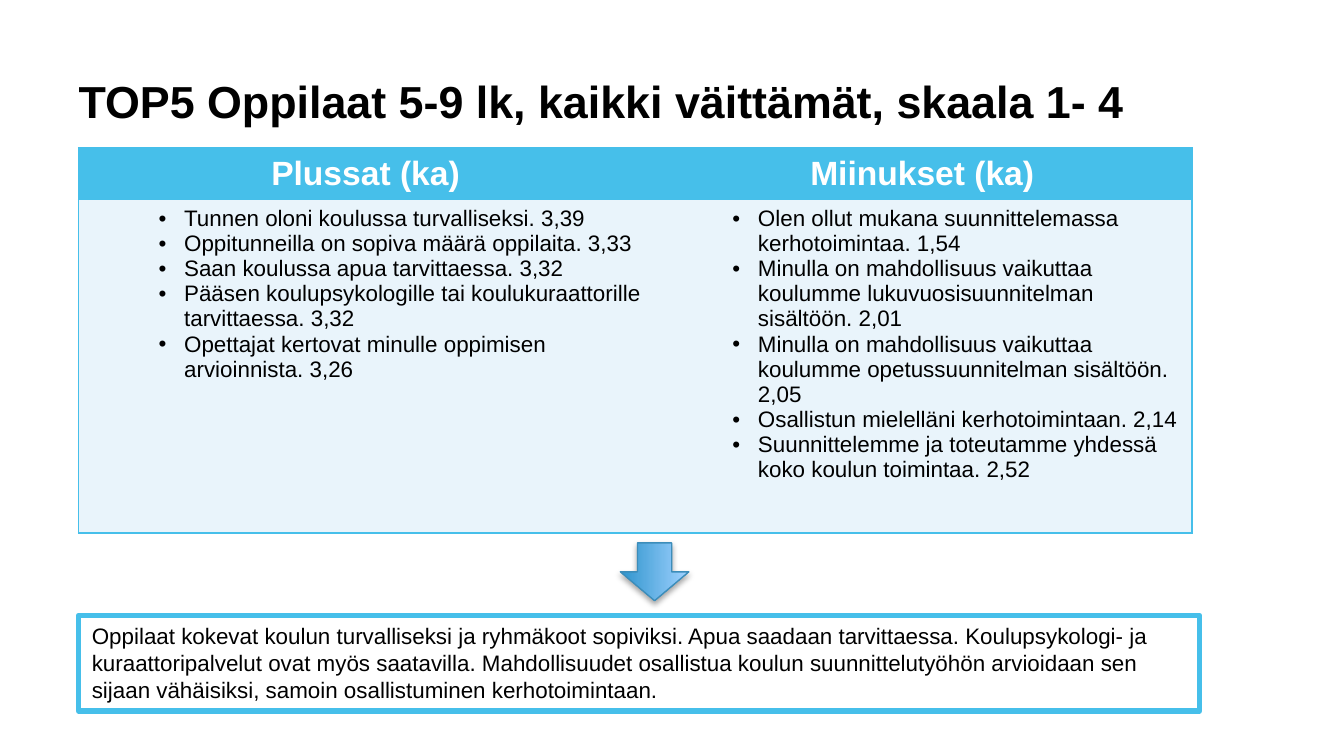
"""Build the slide on the pupils' five best and worst rated claims."""
from lxml import etree
from pptx import Presentation
from pptx.dml.color import RGBColor
from pptx.enum.shapes import MSO_SHAPE
from pptx.enum.text import MSO_ANCHOR, PP_ALIGN
from pptx.oxml.ns import qn
from pptx.util import Pt

PX = 4572
RECT, ARROW = MSO_SHAPE.RECTANGLE, MSO_SHAPE.RIGHT_ARROW
TOP, BOTTOM = MSO_ANCHOR.TOP, MSO_ANCHOR.BOTTOM
LEFT, CENTER = PP_ALIGN.LEFT, PP_ALIGN.CENTER
HUES = {
    "ink": "000000",
    "white": "FFFFFF",
    "sky": "46BFEA",
    "pale": "E9F4FB",
    "deep": "2E94CD",
    "light": "A1D2FF",
    "edge": "3C8DBA",
}
LISTS = {
    "Plussat (ka)": [
        "Tunnen oloni koulussa turvalliseksi. 3,39",
        "Oppitunneilla on sopiva määrä oppilaita. 3,33",
        "Saan koulussa apua tarvittaessa. 3,32",
        "Pääsen koulupsykologille tai koulukuraattorille tarvittaessa. 3,32",
        "Opettajat kertovat minulle oppimisen arvioinnista. 3,26",
    ],
    "Miinukset (ka)": [
        "Olen ollut mukana suunnittelemassa kerhotoimintaa. 1,54",
        "Minulla on mahdollisuus vaikuttaa koulumme lukuvuosisuunnitelman sisältöön. 2,01",
        "Minulla on mahdollisuus vaikuttaa koulumme opetussuunnitelman sisältöön. 2,05",
        "Osallistun mielelläni kerhotoimintaan. 2,14",
        "Suunnittelemme ja toteutamme yhdessä koko koulun toimintaa. 2,52",
    ],
}
SUMMARY = (
    "Oppilaat kokevat koulun turvalliseksi ja ryhmäkoot sopiviksi. Apua saadaan "
    "tarvittaessa. Koulupsykologi- ja kuraattoripalvelut ovat myös saatavilla. "
    "Mahdollisuudet osallistua koulun suunnittelutyöhön arvioidaan sen sijaan "
    "vähäisiksi, samoin osallistuminen kerhotoimintaan."
)


def color(name):
    return RGBColor.from_string(HUES[name])


def write(frame, text, size, hue="ink", bold=False, align=LEFT):
    frame.text = text
    frame.word_wrap = True
    for para in frame.paragraphs:
        para.alignment = align
        for run in para.runs:
            run.font.name = "Arial"
            run.font.size = Pt(size)
            run.font.bold = bold
            run.font.color.rgb = color(hue)


deck = Presentation()
deck.slide_width, deck.slide_height = 2000 * PX, 1125 * PX
slide = deck.slides.add_slide(deck.slide_layouts[6])
shapes = slide.shapes

title = shapes.add_textbox(117 * PX, 35 * PX, 1656 * PX, 154 * PX).text_frame
write(title, "TOP5 Oppilaat 5-9 lk, kaikki väittämät, skaala 1- 4", 24, bold=True)
title.vertical_anchor = BOTTOM
title.margin_left = title.margin_top = title.margin_bottom = 0
title.paragraphs[0].line_spacing = Pt(33)

table = shapes.add_table(2, 2, 117 * PX, 220 * PX, 1657 * PX, 573 * PX).table
table.first_row = table.horz_banding = False
table.columns[0].width, table.columns[1].width = 854 * PX, 803 * PX
table.rows[0].height, table.rows[1].height = 77 * PX, 496 * PX
for col, (head, claims) in enumerate(LISTS.items()):
    pair = [table.cell(row, col) for row in range(2)]
    write(pair[0].text_frame, head, 18, "white", True, CENTER)
    pair[0].margin_top, pair[0].margin_bottom = 11 * PX, 4 * PX
    write(pair[1].text_frame, "\n".join(claims), 12)
    pair[1].margin_right = 16 * PX
    for para in pair[1].text_frame.paragraphs:
        para.level = 1
        props = para._p.get_or_add_pPr()
        props.set("marL", str(137 * PX))
        props.set("indent", str(-38 * PX))
        etree.SubElement(props, qn("a:buFont"), typeface="Arial")
        etree.SubElement(props, qn("a:buChar"), char="•")
    for cell, hue in zip(pair, ("sky", "pale")):
        props = cell._tc.get_or_add_tcPr()
        for side in "LRTB":
            line = etree.SubElement(props, qn("a:ln" + side), w=str(Pt(1)))
            if side == "RL"[col]:
                etree.SubElement(line, qn("a:noFill"))
            else:
                fill = etree.SubElement(line, qn("a:solidFill"))
                etree.SubElement(fill, qn("a:srgbClr"), val=HUES["sky"])
                etree.SubElement(line, qn("a:prstDash"), val="solid")
        cell.fill.solid()
        cell.fill.fore_color.rgb = color(hue)

box = shapes.add_shape(RECT, 117 * PX, 916 * PX, 1668 * PX, 142 * PX)
box.shadow.inherit = False
box.fill.solid()
box.fill.fore_color.rgb = color("white")
box.line.color.rgb = color("sky")
box.line.width = Pt(3)
write(box.text_frame, SUMMARY, 12)
box.text_frame.vertical_anchor = TOP

arrow = shapes.add_shape(ARROW, 931 * PX, 800 * PX, 86 * PX, 102 * PX)
arrow.rotation = 90
arrow.fill.gradient()
arrow.fill.gradient_angle = 90
for stop, hue in zip(arrow.fill.gradient_stops, ("deep", "light")):
    stop.color.rgb = color(hue)
arrow.line.color.rgb = color("edge")
arrow.line.width = Pt(0.75)
arrow.shadow.inherit = False
glow = etree.SubElement(
    arrow._element.spPr.find(qn("a:effectLst")), qn("a:outerShdw"),
    blurRad=str(Pt(3.1)), dist=str(Pt(1.8)), dir="5400000", rotWithShape="0",
)
shade = etree.SubElement(glow, qn("a:srgbClr"), val=HUES["ink"])
etree.SubElement(shade, qn("a:alpha"), val="35000")

deck.save("out.pptx")
